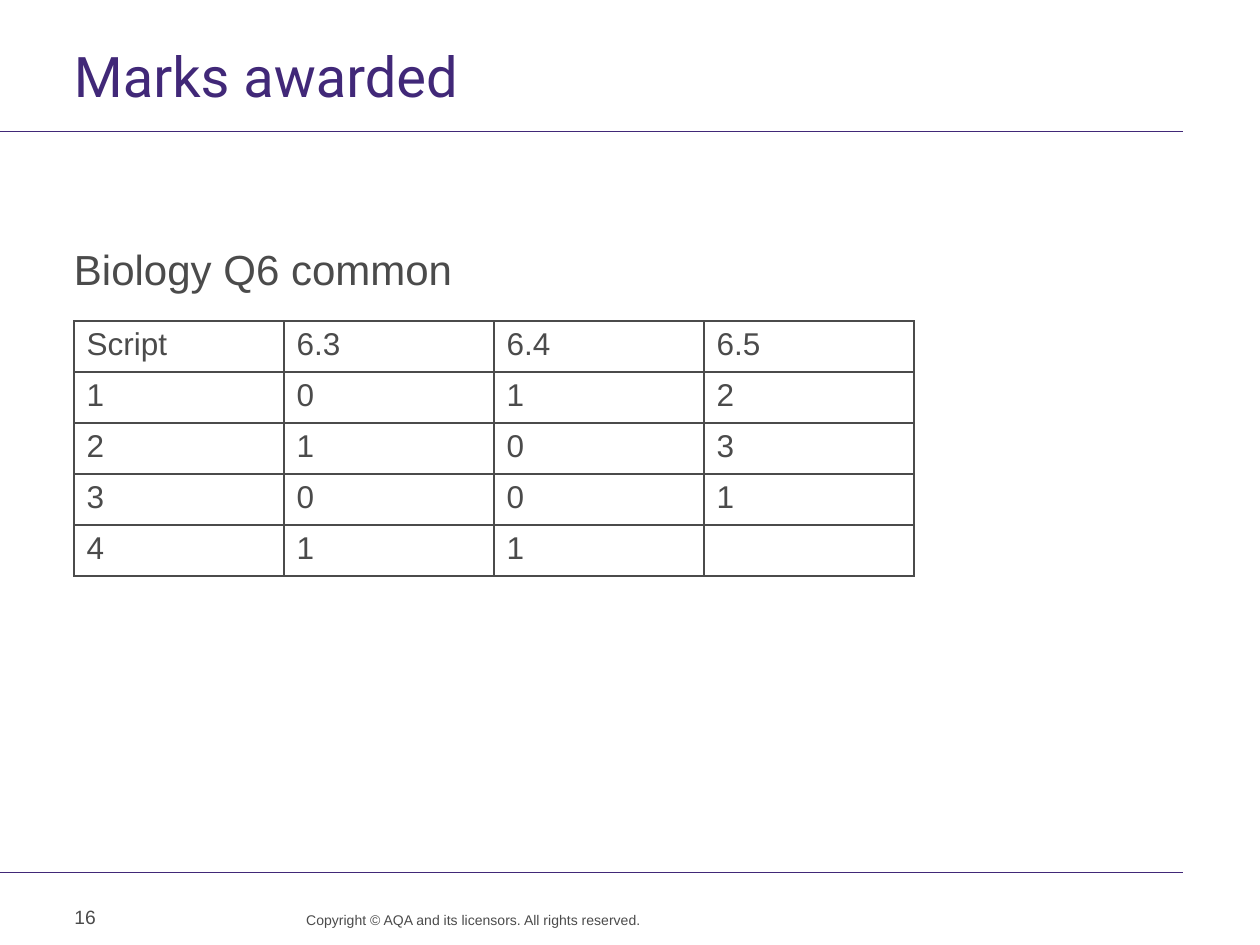
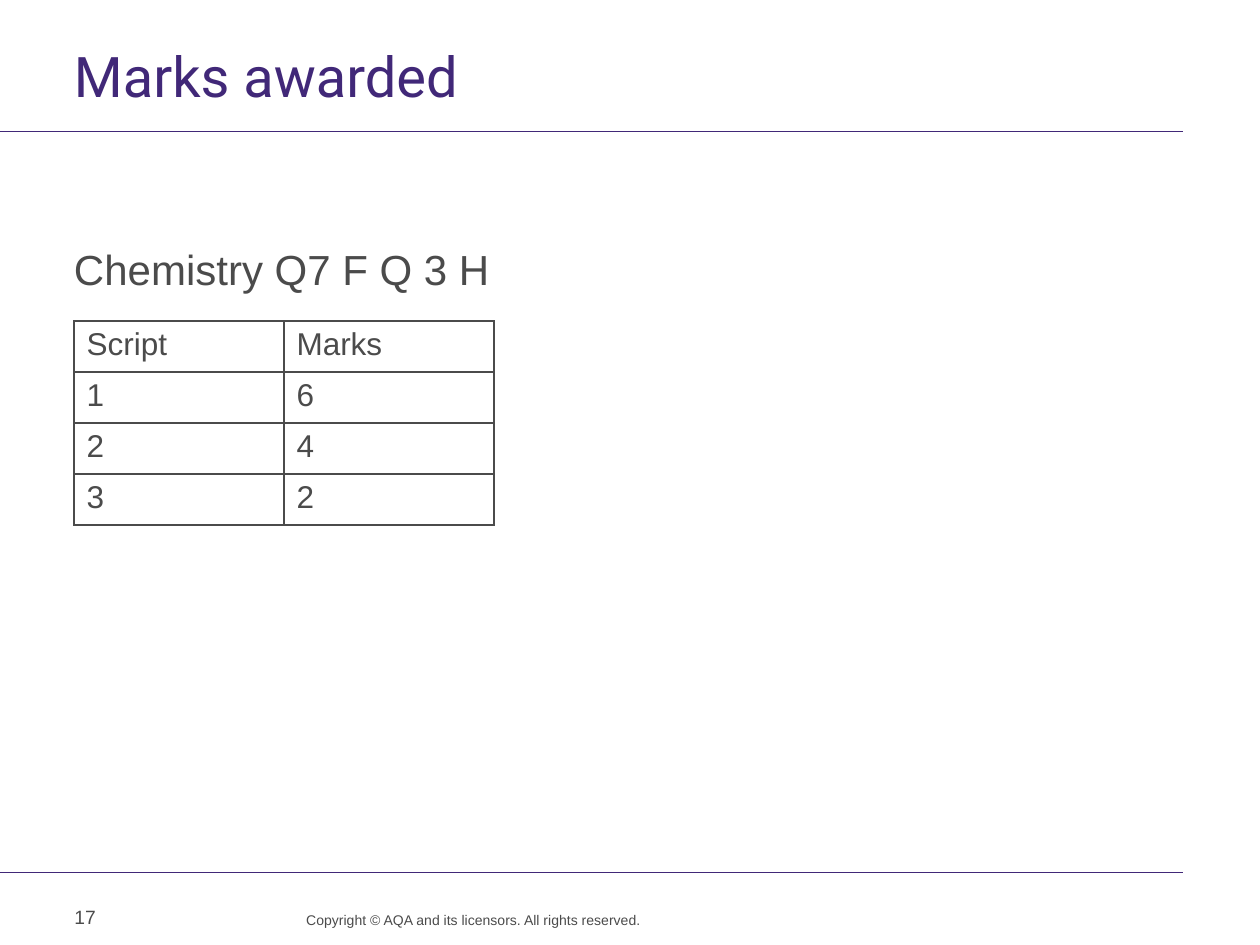
from lxml.etree import SubElement
from pptx import Presentation
from pptx.dml.color import RGBColor
from pptx.enum.shapes import MSO_CONNECTOR
from pptx.enum.text import MSO_ANCHOR as Anchor, PP_ALIGN as Align
from pptx.oxml import parse_xml
from pptx.oxml.ns import nsdecls, qn
from pptx.util import Emu, Pt

TITLE = "Marks awarded"
COPYRIGHT = "Copyright © AQA and its licensors. All rights reserved."
RESULTS = [
    {
        "page": "16",
        "question": "Biology Q6 common",
        "marks": [
            ("Script", "6.3", "6.4", "6.5"),
            ("1", "0", "1", "2"),
            ("2", "1", "0", "3"),
            ("3", "0", "0", "1"),
            ("4", "1", "1", ""),
        ],
    },
    {
        "page": "17",
        "question": "Chemistry Q7 F Q 3 H",
        "marks": [("Script", "Marks"), ("1", "6"), ("2", "4"), ("3", "2")],
    },
]

PURPLE, GREY = "412878", "4B4B4B"
SLIDE_W, SLIDE_H = 1260, 945
LEFT, RIGHT = 74, 1183
RULES_Y = (132, 873)
TABLE_TOP, COLUMN_W, ROW_H = 321, 210, 51

STYLES = {
    "title": {
        "box": (LEFT, 60, RIGHT - LEFT, 59),
        "font": ("Roboto", 32, PURPLE),
        "paragraph": {"line_spacing": Pt(28)},
        "frame": {"margin_left": 0, "margin_top": 0, "margin_bottom": 0},
    },
    "question": {
        "box": (LEFT, 244, RIGHT - LEFT, 60),
        "font": ("Arial", 24, GREY),
        "paragraph": {},
        "frame": {"margin_left": 0, "margin_top": 0, "margin_bottom": 0},
    },
    "copyright": {
        "box": (272, 911, 369, 33),
        "font": ("Arial", 8, GREY),
        "paragraph": {"line_spacing": Pt(10), "alignment": Align.RIGHT},
        "frame": {"margin_left": 0, "margin_top": 0, "margin_right": 0, "margin_bottom": 0},
    },
    "page": {
        "box": (62, 892, 96, 50),
        "font": ("Arial", 11, GREY),
        "paragraph": {},
        "frame": {"vertical_anchor": Anchor.MIDDLE},
    },
}


def px(length):
    return Emu(round(length * 914400 / 126))


def colour(code):
    return RGBColor.from_string(code)


def set_all(target, values):
    for key, value in values.items():
        setattr(target, key, value)


def set_font(font, name, size, code):
    set_all(font, {"name": name, "size": Pt(size)})
    font.color.rgb = colour(code)


def add_text(slide, text, role):
    style = STYLES[role]
    frame = slide.shapes.add_textbox(*map(px, style["box"])).text_frame
    set_all(frame, {"word_wrap": True, **style["frame"]})
    paragraph = frame.paragraphs[0]
    paragraph.text = text
    set_all(paragraph, style["paragraph"])
    set_font(paragraph.runs[0].font, *style["font"])


def add_rule(slide, y):
    rule = slide.shapes.add_connector(MSO_CONNECTOR.STRAIGHT, 0, px(y), px(RIGHT), px(y))
    rule.line.color.rgb = colour(PURPLE)
    rule.line.width = Pt(0.6)
    SubElement(rule._element.spPr, qn("a:effectLst"))


def add_borders(cell):
    properties = cell._tc.get_or_add_tcPr()
    for side in "LRTB":
        properties.append(parse_xml(
            f'<a:ln{side} {nsdecls("a")} w="{Pt(1)}"><a:solidFill>'
            f'<a:srgbClr val="{GREY}"/></a:solidFill></a:ln{side}>'
        ))


def add_marks(slide, marks):
    rows, columns = len(marks), len(marks[0])
    box = (LEFT, TABLE_TOP, columns * COLUMN_W, rows * ROW_H)
    table = slide.shapes.add_table(rows, columns, *map(px, box)).table
    set_all(table, {"first_row": False, "horz_banding": False})
    for column in table.columns:
        column.width = px(COLUMN_W)
    for row, values in zip(table.rows, marks):
        row.height = px(ROW_H)
        for cell, value in zip(row.cells, values):
            cell.text = value
            set_font(cell.text_frame.paragraphs[0].font, "Arial", 18, GREY)
            add_borders(cell)
            cell.fill.background()


def main():
    deck = Presentation()
    set_all(deck, {"slide_width": px(SLIDE_W), "slide_height": px(SLIDE_H)})
    for result in RESULTS:
        slide = deck.slides.add_slide(deck.slide_layouts[6])
        for y in RULES_Y:
            add_rule(slide, y)
        add_text(slide, TITLE, "title")
        add_text(slide, COPYRIGHT, "copyright")
        add_text(slide, result["question"], "question")
        add_marks(slide, result["marks"])
        add_text(slide, result["page"], "page")
    deck.save("out.pptx")


if __name__ == "__main__":
    main()
